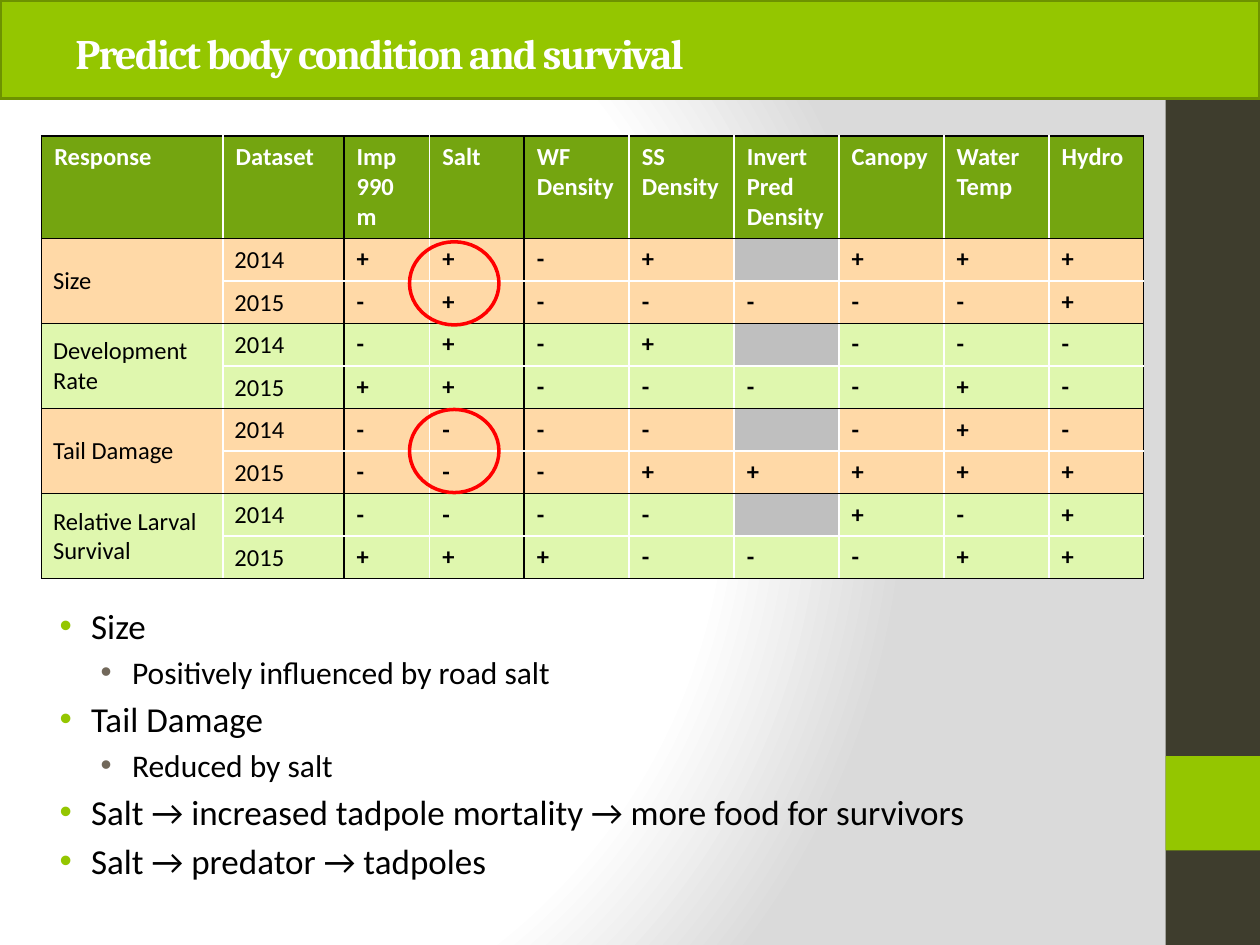
from lxml import etree
from pptx import Presentation
from pptx.dml.color import RGBColor
from pptx.enum.shapes import MSO_SHAPE
from pptx.enum.text import MSO_ANCHOR
from pptx.util import Pt

RECT, OVAL = MSO_SHAPE.RECTANGLE, MSO_SHAPE.OVAL
MIDDLE = MSO_ANCHOR.MIDDLE
NS = "http://schemas.openxmlformats.org/drawingml/2006/main"
PNS = "http://schemas.openxmlformats.org/presentationml/2006/main"

LIME, BLACK, WHITE, GREY = "94C600", "000000", "FFFFFF", "BFBFBF"
GREEN, PEACH, MINT, RED = "74A510", "FFD9A7", "DFF7AE", "FF0000"
TITLE = "Predict body condition and survival"
HEADS = ["Response", "Dataset", "Imp 990 m", "Salt", "WF Density", "SS Density",
         "Invert Pred Density", "Canopy", "Water Temp", "Hydro"]
GROUPS = [
    ("Size", "++-+ +++", "-+-----+"),
    ("Development Rate", "-+-+ ---", "++----+-"),
    ("Tail Damage", "---- -+-", "---+++++"),
    ("Relative Larval Survival", "---- +-+", "+++---++"),
]
YEARS = ["2014", "2015"]
WIDTHS = [103.7, 69.1, 49, 54] + [60] * 5 + [54]
HEAD_H, ROW_H = 58.4, 24.3
LEFT_DARK, RIGHT_DARK = (0, 2, 4), (1, 3, 9)
BULLETS = [
    (0, "Size"),
    (1, "Positively influenced by road salt"),
    (0, "Tail Damage"),
    (1, "Reduced by salt"),
    (0, "Salt → increased tadpole mortality → more food for survivors"),
    (0, "Salt → predator → tadpoles"),
]
LEVELS = [(27, 20, LIME), (50.4, 18, "71685A")]
RINGS = [138.2, 234]
BACK = f"""<p:bg xmlns:p="{PNS}" xmlns:a="{NS}"><p:bgPr><a:gradFill rotWithShape="1">
<a:gsLst><a:gs pos="0"><a:srgbClr val="FFFFFF"/></a:gs>
<a:gs pos="75000"><a:srgbClr val="FFFFFF"/></a:gs>
<a:gs pos="100000"><a:srgbClr val="DADADA"/></a:gs></a:gsLst>
<a:path path="circle"><a:fillToRect l="20000" t="50000" r="100000" b="50000"/></a:path>
</a:gradFill><a:effectLst/></p:bgPr></p:bg>"""


def rgb(code):
    return RGBColor.from_string(code)


def sub(node, tag, **attrs):
    return etree.SubElement(node, f"{{{NS}}}{tag}", **attrs)


def style(part, size, color, bold=False, font="Calibri"):
    for run in part.runs:
        face = run.font
        face.name, face.size, face.bold = font, Pt(size), bold
        face.color.rgb = rgb(color)


def shape(kind, x, y, w, h, fill=None, line=None):
    item = slide.shapes.add_shape(kind, Pt(x), Pt(y), Pt(w), Pt(h))
    item.shadow.inherit = False
    if fill:
        item.fill.solid()
        item.fill.fore_color.rgb = rgb(fill)
    else:
        item.fill.background()
    if line:
        item.line.color.rgb = rgb(line)
        item.line.width = Pt(2)
    else:
        item.line.fill.background()


def textbox(x, y, w, h):
    frame = slide.shapes.add_textbox(Pt(x), Pt(y), Pt(w), Pt(h)).text_frame
    frame.word_wrap = True
    return frame


def edges(cell, row, col):
    dark = {
        "lnL": col in LEFT_DARK,
        "lnR": col in RIGHT_DARK,
        "lnT": row == 0 or row % 2 == 1,
        "lnB": row % 2 == 0 or col == 0,
    }
    props = cell._tc.get_or_add_tcPr()
    for tag, is_dark in dark.items():
        fill = sub(sub(props, tag, w="12700"), "solidFill")
        sub(fill, "srgbClr", val=BLACK if is_dark else WHITE)


def draw_table():
    rows = [HEADS]
    for name, *signs in GROUPS:
        for year, marks in zip(YEARS, signs):
            rows.append([name if year == YEARS[0] else "", year, *marks])
    high = HEAD_H + ROW_H * (len(rows) - 1)
    table = slide.shapes.add_table(len(rows), len(HEADS), Pt(23.8), Pt(77.8),
                                   Pt(sum(WIDTHS)), Pt(high)).table
    table.first_row = table.horz_banding = False
    for col, width in zip(table.columns, WIDTHS):
        col.width = Pt(width)
    for r, row in enumerate(rows):
        table.rows[r].height = Pt(ROW_H if r else HEAD_H)
        band = (PEACH, MINT)[(r - 1) // 2 % 2] if r else GREEN
        for c, text in enumerate(row):
            cell = table.cell(r, c)
            edges(cell, r, c)
            cell.fill.solid()
            cell.fill.fore_color.rgb = rgb(GREY if text == " " else band)
            cell.text_frame.text = text.strip()
            part = cell.text_frame.paragraphs[0]
            style(part, 14, BLACK if r else WHITE, r == 0 or c > 1)
            part.font.size = Pt(14)
            if r and c < 2:
                cell.vertical_anchor = MIDDLE
                cell.margin_left = Pt(6.5)
                cell.margin_top = cell.margin_right = Pt(0.7)
                cell.margin_bottom = 0
    for r in range(1, len(rows), 2):
        table.cell(r, 0).merge(table.cell(r + 1, 0))


def draw_title():
    frame = textbox(36, -5.8, 560, 72)
    frame.vertical_anchor = MIDDLE
    frame.text = TITLE
    part = frame.paragraphs[0]
    style(part, 24, WHITE, True, "Cambria")
    part.runs[0]._r.get_or_add_rPr().set("spc", "-100")


def draw_list():
    frame = textbox(18, 342, 665.3, 102.2)
    frame.text = "\n".join(text for _, text in BULLETS)
    for part, (level, _) in zip(frame.paragraphs, BULLETS):
        indent, size, color = LEVELS[level]
        part.level = level
        part.space_before = Pt(size * 0.2)
        style(part, size, BLACK)
        props = part._p.get_or_add_pPr()
        props.set("marL", str(Pt(indent)))
        props.set("indent", str(Pt(-18)))
        sub(sub(props, "buClr"), "srgbClr", val=color)
        sub(props, "buFont", typeface="Arial")
        sub(props, "buChar", char="•")


deck = Presentation()
deck.slide_width, deck.slide_height = Pt(720), Pt(540)
slide = deck.slides.add_slide(deck.slide_layouts[6])
slide.element.cSld.insert(0, etree.fromstring(BACK))
shape(RECT, 666, 0, 54, 540, "3E3D2D")
shape(RECT, 666, 432, 54, 54, LIME)
draw_table()
shape(RECT, 0, 0, 720, 56.2, LIME, "6D9200")
draw_title()
draw_list()
for top in RINGS:
    shape(OVAL, 234, top, 51.1, 47.5, line=RED)
deck.save("out.pptx")
